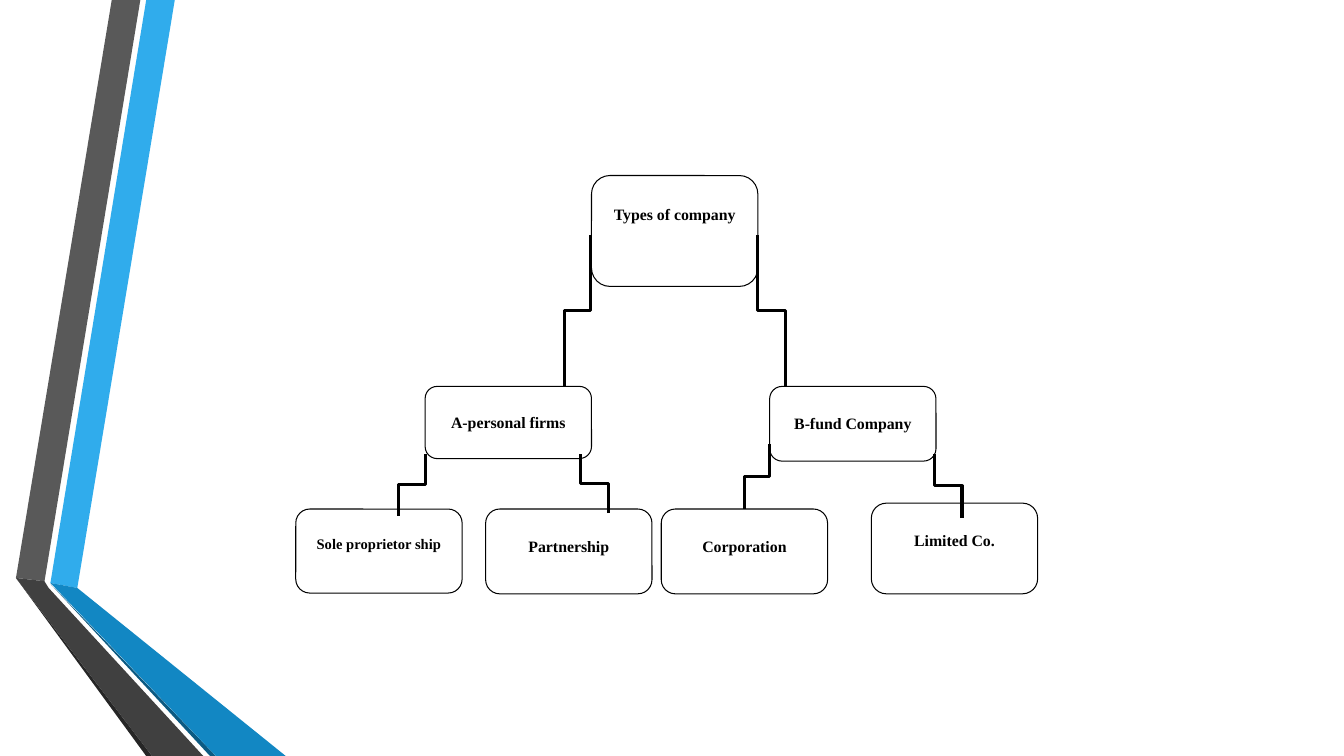
"""Build a slide with a tree of company types beside a folded ribbon."""
from lxml.etree import SubElement
from pptx import Presentation
from pptx.dml.color import RGBColor
from pptx.enum.shapes import MSO_CONNECTOR as Link, MSO_SHAPE as Preset
from pptx.enum.text import MSO_ANCHOR as Anchor, PP_ALIGN as Align
from pptx.oxml.ns import qn
from pptx.util import Inches, Pt

WIDTH, HEIGHT = Inches(13.33), Inches(7.5)
CELL = HEIGHT / 9
BOX_COLS = 1.98

BLACK = RGBColor(0x00, 0x00, 0x00)
SKY = RGBColor(0x30, 0xAC, 0xEC)
BLUE = RGBColor(0x12, 0x87, 0xC3)
NAVY = RGBColor(0x0C, 0x5A, 0x82)
GREY = RGBColor(0x59, 0x59, 0x59)
CHARCOAL = RGBColor(0x40, 0x40, 0x40)
COAL = RGBColor(0x26, 0x26, 0x26)

RIBBONS = [
    (SKY, [(0.6, 6.94), (0.92, 7), (2.08, 0), (1.74, 0)]),
    (GREY, [(1.67, 0), (1.33, 0), (0.19, 6.88), (0.53, 6.92)]),
    (COAL, [(0.19, 6.88), (1.74, 9), (1.81, 9)]),
    (NAVY, [(0.6, 6.95), (2.5, 9), (2.57, 9)]),
    (BLUE, [(0.6, 6.94), (2.57, 9), (3.4, 9), (0.92, 7)]),
    (CHARCOAL, [(2.42, 9), (0.58, 7), (0.53, 6.92), (0.19, 6.88), (1.81, 9)]),
]

BRANCHES = [
    ((11.45, 6.17), (11.12, 5.4)),
    ((8.86, 6.06), (9.16, 5.29)),
    ((7.24, 6.11), (6.91, 5.4)),
    ((4.74, 6.14), (5.06, 5.4)),
    ((9.35, 4.6), (9.02, 2.8)),
    ((6.72, 4.6), (7.03, 2.8)),
]

COMPANIES = [
    ("Types of company", 7.04, 2.09, 1.32, 19.5),
    ("A-personal firms", 5.06, 4.6, 0.86, 19.5),
    ("B-fund Company", 9.16, 4.6, 0.89, 19.5),
    ("Sole proprietor ship", 3.52, 6.06, 1, 18),
    ("Partnership", 5.78, 6.06, 1.01, 19.5),
    ("Corporation", 7.87, 6.06, 1.01, 19.5),
    ("Limited Co.", 10.37, 5.99, 1.08, 19.5),
]


def grid(*cells):
    """Turn grid cells into lengths."""
    return [round(cell * CELL) for cell in cells]


def add_ribbon(shapes, colour, corners):
    """Draw one plain facet of the ribbon."""
    start, *rest = [grid(*corner) for corner in corners]
    builder = shapes.build_freeform(*start)
    builder.add_line_segments(rest)
    facet = builder.convert_to_shape()
    facet.shadow.inherit = False
    facet.fill.solid()
    facet.fill.fore_color.rgb = colour
    facet.line.fill.background()


def add_branch(shapes, child, parent):
    """Link a child up to its parent with an elbow that leaves vertically."""
    (child_x, child_y), (parent_x, parent_y) = child, parent
    half_rise = (child_y - parent_y) / 2
    half_run = abs(child_x - parent_x) / 2
    mid_x, mid_y = (child_x + parent_x) / 2, (child_y + parent_y) / 2
    left, right, top, bottom = grid(mid_x - half_rise, mid_x + half_rise,
                                    mid_y - half_run, mid_y + half_run)
    leans_left = child_x > parent_x
    begin_x, end_x = (left, right) if leans_left else (right, left)
    branch = shapes.add_connector(Link.ELBOW, begin_x, bottom, end_x, top)
    branch.line.color.rgb = BLACK
    branch.line.width = Pt(2.25)
    properties = branch.element.spPr
    properties.xfrm.rot = 270 if leans_left else 90
    SubElement(properties, qn("a:effectLst"))


def add_company(shapes, label, col, row, rows, size):
    """Add an outlined box with its lowered bold label."""
    box = shapes.add_shape(Preset.ROUNDED_RECTANGLE,
                           *grid(col, row, BOX_COLS, rows))
    box.shadow.inherit = False
    box.fill.background()
    box.line.color.rgb = BLACK
    box.line.width = Pt(0.75)
    frame = box.text_frame
    frame.word_wrap = True
    frame.vertical_anchor = Anchor.TOP
    frame.text = label
    paragraph = frame.paragraphs[0]
    paragraph.alignment = Align.CENTER
    font = paragraph.runs[0].font
    font.name = "Times New Roman"
    font.size = Pt(size)
    font.bold = True
    font.color.rgb = BLACK
    paragraph.runs[0].font._element.set("baseline", "-25000")


def main():
    """Build and save the slide."""
    deck = Presentation()
    deck.slide_width, deck.slide_height = WIDTH, HEIGHT
    shapes = deck.slides.add_slide(deck.slide_layouts[6]).shapes
    for colour, corners in RIBBONS:
        add_ribbon(shapes, colour, corners)
    for child, parent in BRANCHES:
        add_branch(shapes, child, parent)
    for company in COMPANIES:
        add_company(shapes, *company)
    deck.save("out.pptx")


if __name__ == "__main__":
    main()
